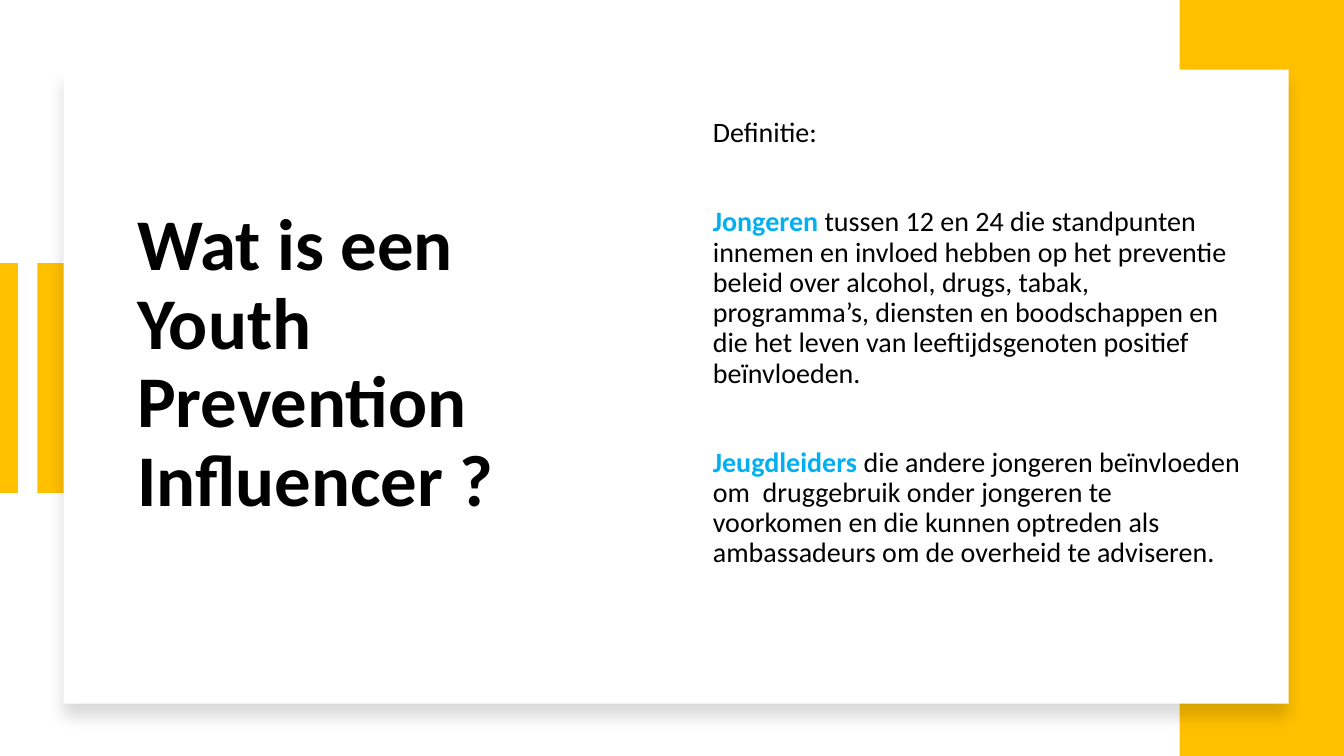
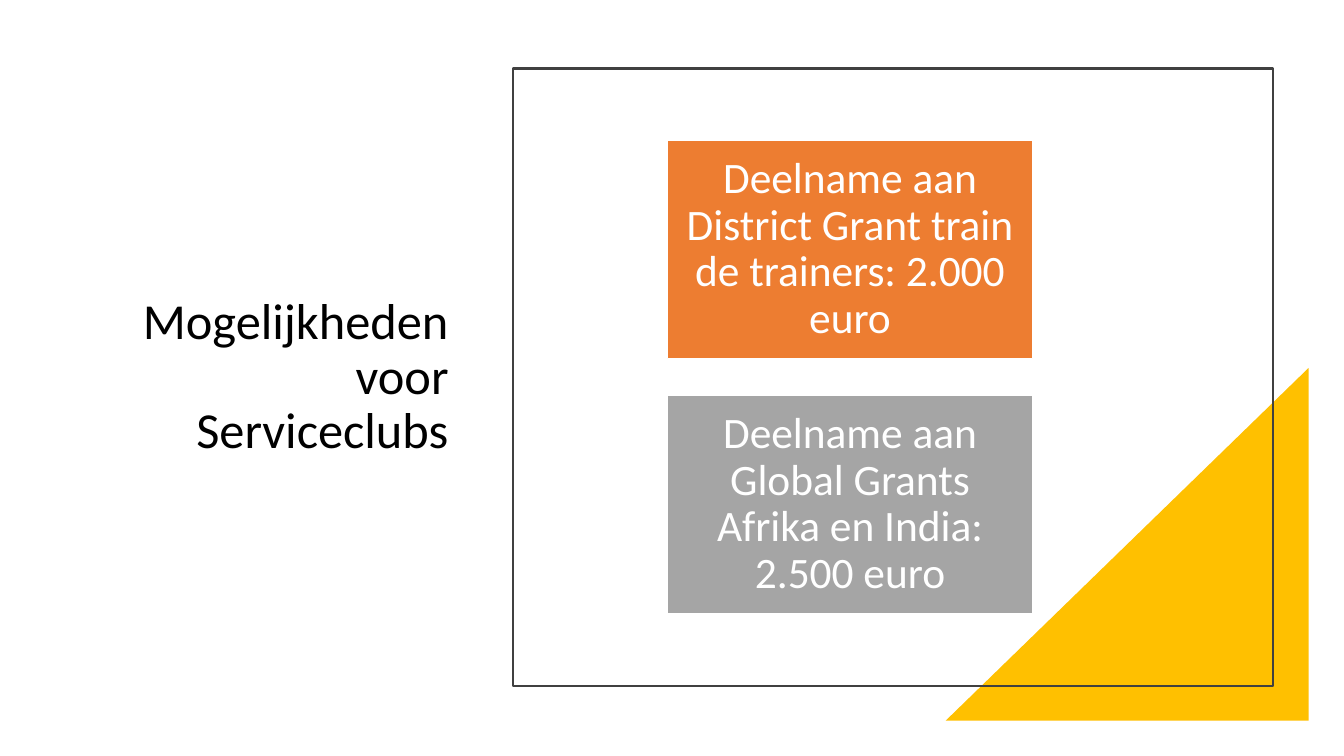
from lxml import etree
from pptx import Presentation
from pptx import util as u
from pptx.dml.color import RGBColor
from pptx.enum import shapes, text
from pptx.oxml import ns

FONT = "Calibri"
GOLD, BLUE, BLACK, WHITE = "FFC000", "00B0F0", "000000", "FFFFFF"
ORANGE, GRAY, DARK = "ED7D31", "A5A5A5", "404040"
RECT = shapes.MSO_SHAPE.RECTANGLE
ALIGN = text.PP_ALIGN

BODY = [
    [("Definitie:", BLACK)],
    [("Jongeren", BLUE),
     (" tussen 12 en 24 die standpunten innemen en invloed hebben op het "
      "preventie beleid over alcohol, drugs, tabak, programma’s, diensten en "
      "boodschappen en die het leven van leeftijdsgenoten positief "
      "beïnvloeden.", BLACK)],
    [("Jeugdleiders", BLUE),
     (" die andere jongeren beïnvloeden om  druggebruik onder jongeren te "
      "voorkomen en die kunnen optreden als ambassadeurs om de overheid te "
      "adviseren.", BLACK)],
]
CARDS = [
    ("Deelname aan District Grant train de trainers: 2.000 euro", ORANGE),
    ("Deelname aan Global Grants Afrika en India: 2.500 euro", GRAY),
]


def color(code):
    """Turn a hex string into a colour."""
    return RGBColor.from_string(code)


def inches(box):
    """Turn numbers into lengths."""
    return [u.Inches(n) for n in box]


def add(parent, name, parent_add):
    """Add a drawing element with the given attributes."""
    return etree.SubElement(parent, ns.qn(name), parent_add)


def shape(slide, kind, box, fill=None, line=None, width=1):
    """Place a flat preset shape."""
    item = slide.shapes.add_shape(kind, *inches(box))
    item.shadow.inherit = False
    if fill:
        item.fill.solid()
        item.fill.fore_color.rgb = color(fill)
    else:
        item.fill.background()
    if line:
        item.line.color.rgb = color(line)
        item.line.width = u.Pt(width)
    else:
        item.line.fill.background()
    return item


def style(run, size, code, bold=False):
    """Format one run."""
    run.font.name = FONT
    run.font.size = u.Pt(size)
    run.font.bold = bold
    run.font.color.rgb = color(code)


def frame(item, wrap=True):
    """Set up a text frame centred in height."""
    area = item.text_frame
    area.word_wrap = wrap
    area.auto_size = text.MSO_AUTO_SIZE.NONE
    area.vertical_anchor = text.MSO_ANCHOR.MIDDLE
    return area


def write(item, words, size, code, align, bold=False):
    """Write a single paragraph into a shape."""
    area = frame(item)
    area.text = words
    para = area.paragraphs[0]
    para.alignment = align
    para.line_spacing = 0.9
    style(para.runs[0], size, code, bold)


def place(slide, item, box):
    """Move a placeholder to a box, in front of the shapes."""
    item.left, item.top, item.width, item.height = inches(box)
    slide.shapes._spTree.append(item._element)


def title(slide, box, words, size, align, bold=False):
    """Fill the title placeholder."""
    place(slide, slide.shapes.title, box)
    write(slide.shapes.title, words, size, BLACK, align, bold)


def body(slide, box, paras):
    """Fill the body placeholder without bullets."""
    item = slide.placeholders[1]
    place(slide, item, box)
    area = frame(item)
    for i, parts in enumerate(paras):
        para = area.paragraphs[0] if i == 0 else area.add_paragraph()
        props = para._p.get_or_add_pPr()
        props.set("marL", "0")
        props.set("indent", "0")
        add(props, "a:buNone", {})
        para.alignment = ALIGN.LEFT
        para.line_spacing = 0.9
        para.space_before = u.Pt(42 if i else 0)
        for words, code in parts:
            run = para.add_run()
            run.text = words
            style(run, 20, code, code == BLUE)


def stripes(slide, x, y, high):
    """Draw the two gold bars at the left edge."""
    shape(slide, RECT, (x + 0.29, y, 0.34, high), GOLD)
    bar = slide.shapes.add_connector(
        shapes.MSO_CONNECTOR.STRAIGHT,
        *inches((x, y, x, y + high)))
    bar.line.color.rgb = color(GOLD)
    bar.line.width = u.Pt(14)
    add(bar._element.spPr, "a:effectLst", {})


def panel(slide, box):
    """Draw the white panel with a soft shadow below."""
    item = shape(slide, RECT, box, WHITE)
    effects = item._element.spPr.find(ns.qn("a:effectLst"))
    shade = add(effects, "a:outerShdw", {
        "blurRad": str(u.Pt(11)), "dist": str(u.Pt(10)),
        "dir": "5400000", "algn": "t", "rotWithShape": "0"})
    tint = add(shade, "a:srgbClr", {"val": BLACK})
    add(tint, "a:alpha", {"val": "15000"})


def cards(slide, x, y, wide, high, gap):
    """Stack the coloured cards."""
    for i, (words, fill) in enumerate(CARDS):
        box = (x, y + i * (high + gap), wide, high)
        card = shape(slide, RECT, box, fill, WHITE)
        write(card, words, 31, WHITE, ALIGN.CENTER)
        area = card.text_frame
        area.margin_left = area.margin_right = u.Inches(0.13)
        area.margin_top = area.margin_bottom = u.Inches(0.13)


def define(deck):
    """Build the definition slide."""
    slide = deck.slides.add_slide(deck.slide_layouts[1])
    stripes(slide, 0.08, 2.61, 2.28)
    shape(slide, RECT, (11.7, 0, 1.63, 7.5), GOLD)
    panel(slide, (0.63, 0.69, 12.15, 6.29))
    title(slide, (1.26, 1.06, 4.38, 5.12),
          "Wat is een Youth Prevention Influencer ?", 52, ALIGN.LEFT, True)
    body(slide, (6.97, 0.85, 5.44, 5.12), BODY)


def options(deck):
    """Build the slide with the options for clubs."""
    slide = deck.slides.add_slide(deck.slide_layouts[5])
    title(slide, (1.1, 1.3, 3.45, 4.9),
          "Mogelijkheden voor Serviceclubs", 36, ALIGN.RIGHT)
    corner = shape(slide, shapes.MSO_SHAPE.RIGHT_TRIANGLE,
                   (9.38, 3.65, 3.6, 3.5), GOLD)
    corner._element.spPr.xfrm.set("flipH", "1")
    shape(slide, RECT, (5.09, 0.68, 7.54, 6.13), line=DARK, width=1.5)
    cards(slide, 6.62, 1.39, 3.62, 2.17, 0.36)


def main():
    """Build and save the deck."""
    deck = Presentation()
    deck.slide_width, deck.slide_height = inches((13.33, 7.5))
    define(deck)
    options(deck)
    deck.save("out.pptx")


if __name__ == "__main__":
    main()
